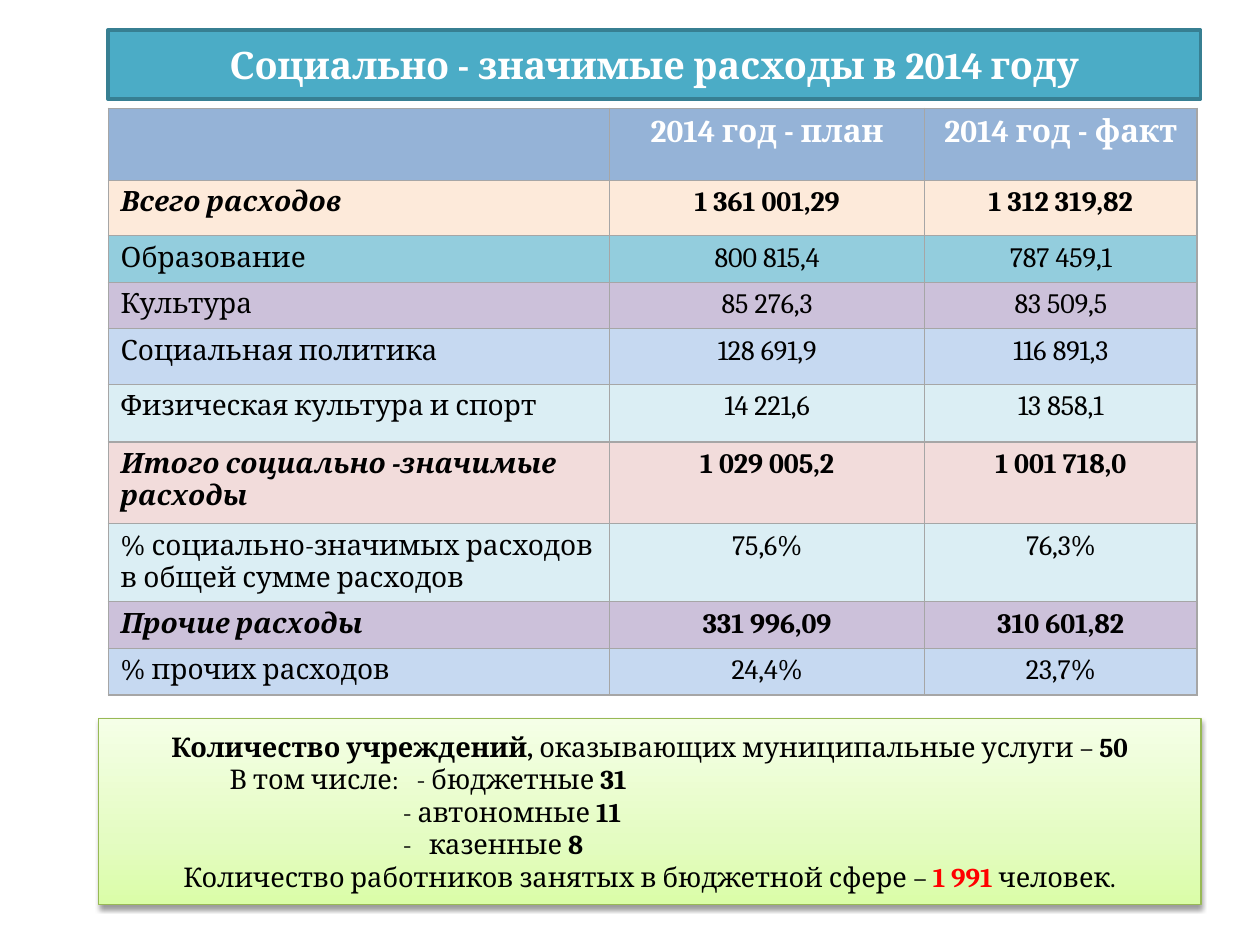
from lxml.etree import SubElement
from pptx import Presentation
from pptx.dml.color import RGBColor
from pptx.enum.shapes import MSO_SHAPE as Shape
from pptx.enum.text import MSO_ANCHOR as Anchor, MSO_AUTO_SIZE as AutoSize, PP_ALIGN as Align
from pptx.oxml import parse_xml
from pptx.oxml.ns import nsdecls, qn
from pptx.util import Cm, Pt

FONT = "Cambria"
WHITE = RGBColor(0xFF, 0xFF, 0xFF)
BLACK = RGBColor(0x00, 0x00, 0x00)
RED = RGBColor(0xFF, 0x00, 0x00)
TEAL = RGBColor(0x4B, 0xAC, 0xC6)
DARK_TEAL = RGBColor(0x37, 0x7F, 0x92)
HEADER_BLUE = RGBColor(0x95, 0xB3, 0xD7)
CREAM = RGBColor(0xFD, 0xEA, 0xDA)
AQUA = RGBColor(0x93, 0xCD, 0xDD)
LILAC = RGBColor(0xCC, 0xC1, 0xDA)
SKY = RGBColor(0xC6, 0xD9, 0xF1)
PALE_AQUA = RGBColor(0xDB, 0xEE, 0xF4)
ROSE = RGBColor(0xF2, 0xDC, 0xDB)
BORDER_GREY = RGBColor(0xA6, 0xA6, 0xA6)
GREEN = RGBColor(0x98, 0xB9, 0x55)
LIGHT_GREENS = [(0, RGBColor(0xDA, 0xFD, 0xA7)), (35, RGBColor(0xE4, 0xFC, 0xC2)),
                (100, RGBColor(0xF5, 0xFF, 0xE7))]

COLUMN_WIDTHS = [10.11, 6.35, 5.49]
# label, plan, fact, fill, is a total, row height
BUDGET_ROWS = [
    ("Всего расходов", "1 361 001,29", "1 312 319,82", CREAM, True, 1.12),
    ("Образование", "800 815,4", "787 459,1", AQUA, False, 0.94),
    ("Культура", "85 276,3", "83 509,5", LILAC, False, 0.94),
    ("Социальная политика", "128 691,9", "116 891,3", SKY, False, 1.12),
    ("Физическая культура и спорт", "14 221,6", "13 858,1", PALE_AQUA, False, 1.16),
    ("Итого социально -значимые расходы", "1 029 005,2", "1 001 718,0", ROSE, True, 1.65),
    ("% социально-значимых расходов в общей сумме расходов", "75,6%", "76,3%",
     PALE_AQUA, False, 1.57),
    ("Прочие расходы", "331 996,09", "310 601,82", LILAC, True, 0.94),
    ("% прочих расходов", "24,4%", "23,7%", SKY, False, 0.94),
]
# alignment, left margin, first-line indent, runs of (text, bold, colour)
STAFF_LINES = [
    (Align.CENTER, 0, 0, [("Количество учреждений, ", True, BLACK),
                          ("оказывающих муниципальные услуги – ", False, BLACK),
                          ("50", True, BLACK)]),
    (Align.LEFT, 6.17, -3.77, [("В том числе:\t- бюджетные ", False, BLACK),
                               ("31", True, BLACK)]),
    (Align.LEFT, 5.89, 0, [("- автономные ", False, BLACK), ("11", True, BLACK)]),
    (Align.LEFT, 6.42, -0.53, [("-\tказенные ", False, BLACK), ("8", True, BLACK)]),
    (Align.CENTER, 0, 0, [("Количество работников занятых в бюджетной сфере – ", False, BLACK),
                          ("1 991 ", True, RED), ("человек.", False, BLACK)]),
]


class BudgetSlide:
    """Holds the text style and the current page."""

    def __init__(self, deck, font):
        self.font = font
        self.page = deck.slides.add_slide(deck.slide_layouts[5])

    def add_span(self, para, text, size, color=BLACK, bold=False, italic=False):
        span = para.add_run()
        span.text = text
        font = span.font
        font.name, font.size, font.bold, font.italic = self.font, Pt(size), bold, italic
        font.color.rgb = color

    def place_title(self, text, left, top, width, height):
        title = self.page.shapes.title
        title.left, title.top, title.width, title.height = map(Cm, (left, top, width, height))
        title.fill.solid()
        title.fill.fore_color.rgb = TEAL
        title.line.color.rgb = DARK_TEAL
        title.line.width = Pt(2)
        frame = title.text_frame
        frame.auto_size = AutoSize.NONE
        frame.vertical_anchor = Anchor.MIDDLE
        para = frame.paragraphs[0]
        para.alignment = Align.CENTER
        self.add_span(para, text, 21.6, WHITE, bold=True)

    def style_cell(self, cell, fill):
        cell.fill.solid()
        cell.fill.fore_color.rgb = fill
        properties = cell._tc.get_or_add_tcPr()
        for position, side in enumerate(("lnL", "lnR", "lnT", "lnB")):
            properties.insert(position, parse_xml(
                f'<a:{side} {nsdecls("a")} w="{Pt(0.75)}"><a:solidFill>'
                f'<a:srgbClr val="{BORDER_GREY}"/></a:solidFill></a:{side}>'))

    def add_budget_table(self, left, top, headers, header_height):
        heights = [header_height] + [row[-1] for row in BUDGET_ROWS]
        table = self.page.shapes.add_table(
            len(heights), len(COLUMN_WIDTHS), Cm(left), Cm(top),
            Cm(sum(COLUMN_WIDTHS)), Cm(sum(heights))).table
        for column, width in zip(table.columns, COLUMN_WIDTHS):
            column.width = Cm(width)
        for row, height in zip(table.rows, heights):
            row.height = Cm(height)

        # Header row
        for cell, text in zip(table.rows[0].cells, headers):
            self.style_cell(cell, HEADER_BLUE)
            if text:
                para = cell.text_frame.paragraphs[0]
                para.alignment = Align.CENTER
                self.add_span(para, text, 18, WHITE, bold=True)

        # Budget rows: labels on the left, amounts centred
        for row_index, (*texts, fill, total, _) in enumerate(BUDGET_ROWS, start=1):
            for column_index, text in enumerate(texts):
                cell = table.cell(row_index, column_index)
                self.style_cell(cell, fill)
                is_label = column_index == 0
                para = cell.text_frame.paragraphs[0]
                para.alignment = Align.LEFT if is_label else Align.CENTER
                self.add_span(para, text, 16, bold=total, italic=total and is_label)

    def add_staff_box(self, left, top, width, height):
        box = self.page.shapes.add_shape(
            Shape.RECTANGLE, Cm(left), Cm(top), Cm(width), Cm(height))
        box.line.color.rgb = GREEN
        box.line.width = Pt(0.75)

        # Three-stop gradient, rising from the bottom edge
        stops = "".join(f'<a:gs pos="{position * 1000}"><a:srgbClr val="{color}"/></a:gs>'
                        for position, color in LIGHT_GREENS)
        properties = box._element.spPr
        properties.find(qn("a:prstGeom")).addnext(parse_xml(
            f'<a:gradFill {nsdecls("a")}><a:gsLst>{stops}</a:gsLst>'
            '<a:lin ang="16200000" scaled="0"/></a:gradFill>'))

        # Soft shadow below
        box.shadow.inherit = False
        shadow = SubElement(properties.find(qn("a:effectLst")), qn("a:outerShdw"),
                            blurRad=str(Pt(3.1)), dist=str(Pt(1.6)), dir="5400000",
                            rotWithShape="0")
        tint = SubElement(shadow, qn("a:srgbClr"), val=str(BLACK))
        SubElement(tint, qn("a:alpha"), val="38000")

        frame = box.text_frame
        frame.word_wrap = True
        frame.vertical_anchor = Anchor.MIDDLE
        for index, (alignment, margin, indent, spans) in enumerate(STAFF_LINES):
            para = frame.add_paragraph() if index else frame.paragraphs[0]
            para.alignment = alignment
            if margin:
                layout = para._p.get_or_add_pPr()
                layout.set("marL", str(Cm(margin)))
                layout.set("indent", str(Cm(indent)))
            for text, bold, color in spans:
                self.add_span(para, text, 15.5, color, bold)


def main():
    deck = Presentation()
    deck.slide_width, deck.slide_height = Cm(25.4), Cm(19.05)
    slide = BudgetSlide(deck, FONT)
    slide.place_title("Социально - значимые расходы в 2014 году", 2.18, 0.6, 22.02, 1.4)
    slide.add_budget_table(2.18, 2.18, ["", "2014 год - план", "2014 год - факт"], 1.45)
    slide.add_staff_box(1.98, 14.48, 22.23, 3.76)
    deck.save("out.pptx")


if __name__ == "__main__":
    main()
